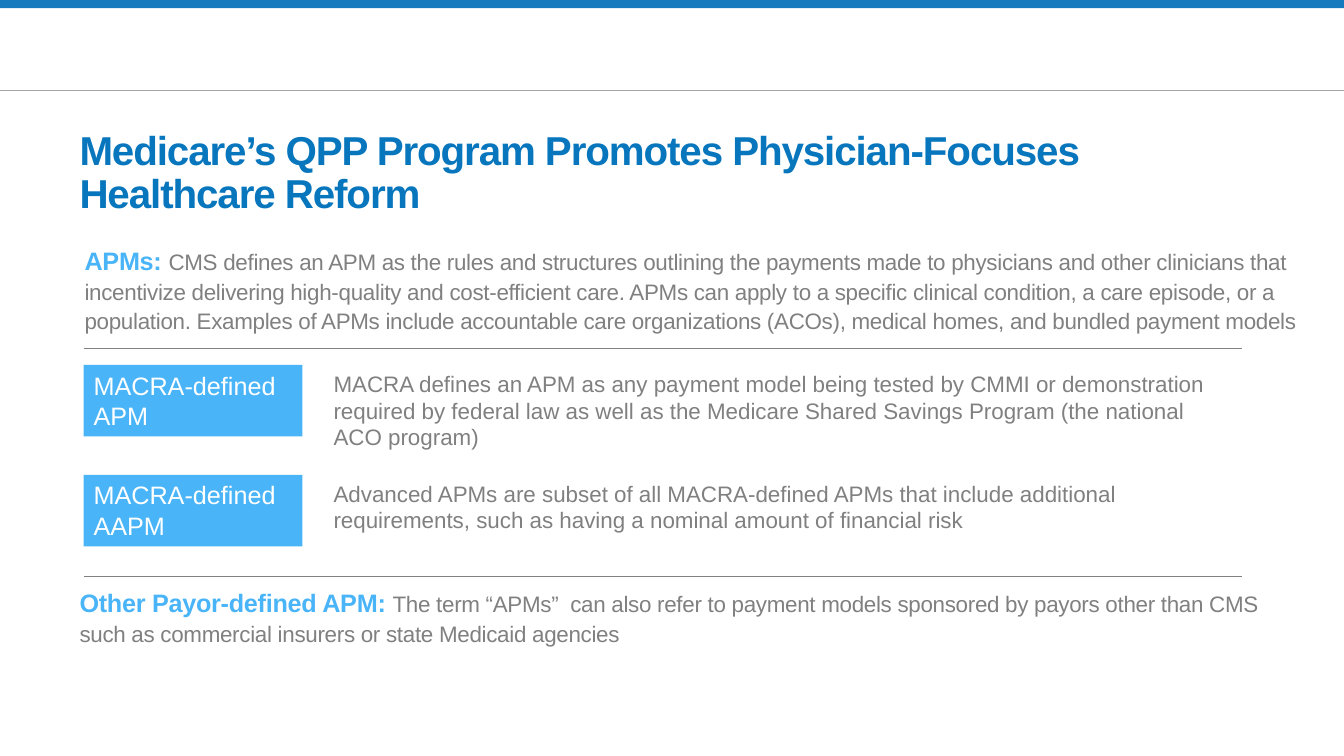
from pptx import Presentation
from pptx.dml.color import RGBColor
from pptx.enum.shapes import MSO_CONNECTOR, MSO_SHAPE
from pptx.enum.text import MSO_ANCHOR, PP_ALIGN
from pptx.oxml.ns import qn
from pptx.util import Inches, Pt

RECTANGLE = MSO_SHAPE.RECTANGLE
STRAIGHT = MSO_CONNECTOR.STRAIGHT
TOP, MIDDLE = MSO_ANCHOR.TOP, MSO_ANCHOR.MIDDLE
LEFT = PP_ALIGN.LEFT

WIDTH, HEIGHT = 13.33, 7.5
FONT = "Arial"
COLORS = {
    "banner": "157BBE",
    "title": "0776BD",
    "accent": "49B4F8",
    "body": "808080",
    "header_rule": "A6A6A6",
    "white": "FFFFFF",
}

TITLE = "Medicare’s QPP Program Promotes Physician-Focuses Healthcare Reform"
APM_LEAD = "APMs: "
APM_TEXT = (
    "CMS defines an APM as the rules and structures outlining the payments made to "
    "physicians and other clinicians that incentivize delivering high-quality and "
    "cost-efficient care. APMs can apply to a specific clinical condition, a care "
    "episode, or a population. Examples of APMs include accountable care organizations "
    "(ACOs), medical homes, and bundled payment models"
)
DEFINITIONS = [
    (
        "MACRA-defined APM",
        "MACRA defines an APM as any payment model being tested by CMMI or demonstration "
        "required by federal law as well as the Medicare Shared Savings Program "
        "(the national ACO program)",
    ),
    (
        "MACRA-defined AAPM",
        "Advanced APMs are subset of all MACRA-defined APMs that include additional "
        "requirements, such as having a nominal amount of financial risk",
    ),
]
OTHER_LEAD = "Other Payor-defined APM: "
OTHER_TEXT = (
    "The term “APMs”  can also refer to payment models sponsored by payors other than "
    "CMS such as commercial insurers or state Medicaid agencies"
)


def rgb(name):
    return RGBColor.from_string(COLORS[name])


def add_run(paragraph, text, size, color, bold=False, spacing=0):
    run = paragraph.add_run()
    run.text = text
    run.font.name = FONT
    run.font.size = Pt(size)
    run.font.bold = bold
    run.font.color.rgb = rgb(color)
    if spacing:
        run.font._element.set("spc", str(round(spacing * 100)))


def first_paragraph(shape, anchor=TOP, line_spacing=1.0):
    frame = shape.text_frame
    frame.word_wrap = True
    frame.vertical_anchor = anchor
    paragraph = frame.paragraphs[0]
    paragraph.alignment = LEFT
    paragraph.line_spacing = line_spacing
    return paragraph


def add_text_box(slide, box):
    return slide.shapes.add_textbox(*map(Inches, box))


def add_block(slide, box, color):
    shape = slide.shapes.add_shape(RECTANGLE, *map(Inches, box))
    shape.shadow.inherit = False
    shape.fill.solid()
    shape.fill.fore_color.rgb = rgb(color)
    shape.line.fill.background()
    return shape


def add_rule(slide, left, right, top, color):
    rule = slide.shapes.add_connector(
        STRAIGHT, Inches(left), Inches(top), Inches(right), Inches(top)
    )
    rule.line.color.rgb = rgb(color)
    rule.line.width = Pt(0.5)
    properties = rule._element.spPr
    properties.append(properties.makeelement(qn("a:effectLst"), {}))


def add_header(slide, box):
    left, top, width, height = box
    add_rule(slide, left, left + width, top + height, "header_rule")
    add_block(slide, (left, top, width, 0.08), "banner")


def add_title(slide, box):
    paragraph = first_paragraph(add_text_box(slide, box), MIDDLE, 0.9)
    add_run(paragraph, TITLE, 28.8, "title", True, -0.8)


def add_lead_text(slide, box, lead, text):
    paragraph = first_paragraph(add_text_box(slide, box), line_spacing=1.1)
    add_run(paragraph, lead, 18, "accent", True, -0.2)
    add_run(paragraph, text, 16, "body", spacing=-0.2)


def add_definitions(slide, box):
    left, top, width, height = box
    add_rule(slide, left, left + width, top, "body")
    add_rule(slide, left, left + width, top + height, "body")
    label_width, text_offset, row_pitch, row_inset = 2.17, 2.38, 1.09, 0.16
    for row, (label, text) in enumerate(DEFINITIONS):
        row_top = top + row_inset + row * row_pitch
        block = add_block(slide, (left, row_top, label_width, 0.71), "accent")
        add_run(first_paragraph(block), label, 18, "white")
        text_box = add_text_box(
            slide, (left + text_offset, row_top, width - text_offset, 0.91)
        )
        add_run(first_paragraph(text_box), text, 16, "body")


def main():
    presentation = Presentation()
    presentation.slide_width = Inches(WIDTH)
    presentation.slide_height = Inches(HEIGHT)
    slide = presentation.slides.add_slide(presentation.slide_layouts[6])
    add_header(slide, (0, 0, WIDTH, 0.12 * HEIGHT))
    add_title(slide, (0.69, 1.22, 11.98, 1.01))
    add_lead_text(slide, (0.74, 2.35, 12.32, 1.1), APM_LEAD, APM_TEXT)
    add_definitions(slide, (0.83, 3.46, 11.49, 2.26))
    add_lead_text(slide, (0.69, 5.75, 12.32, 0.8), OTHER_LEAD, OTHER_TEXT)
    presentation.save("out.pptx")


if __name__ == "__main__":
    main()
